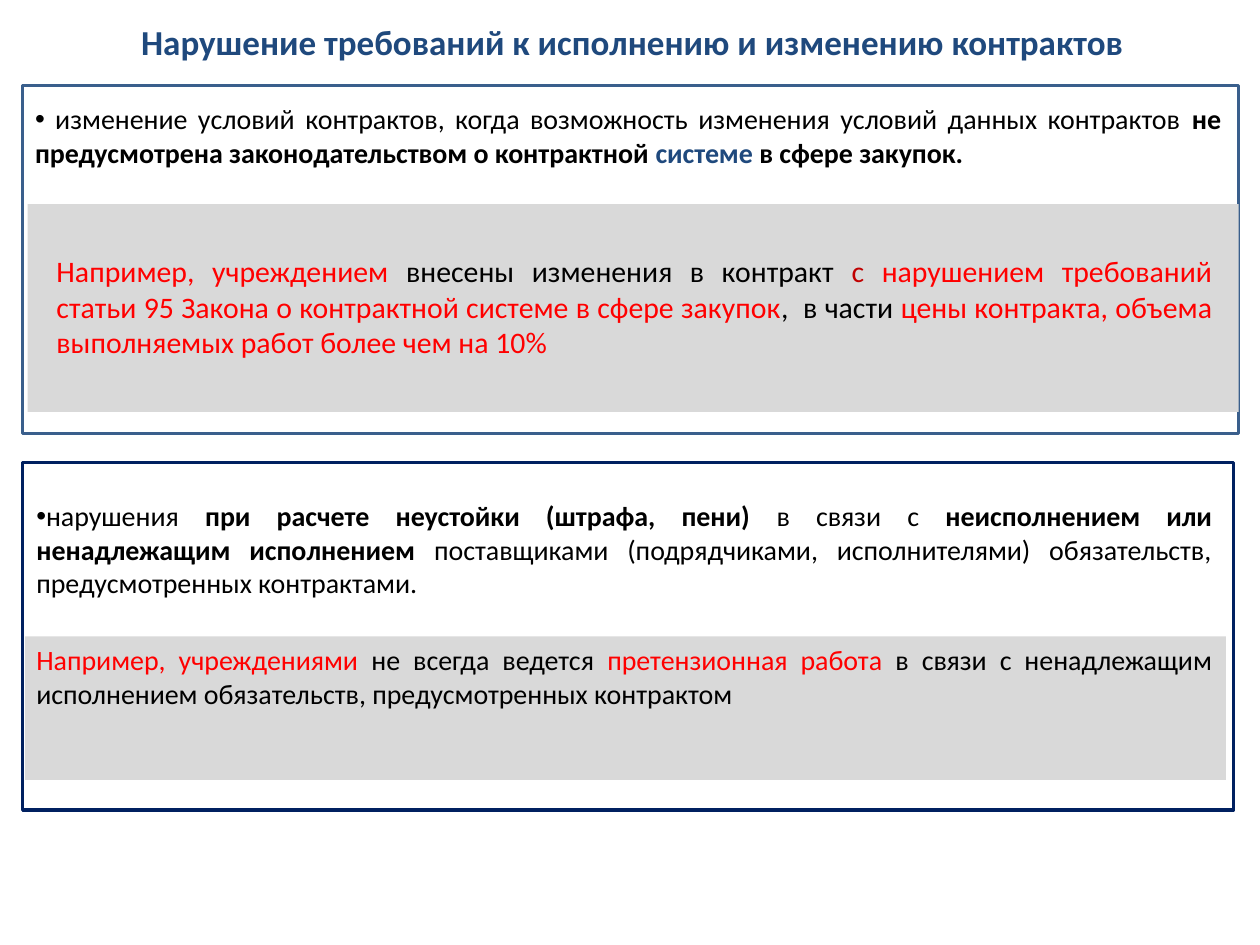
from lxml import etree
from pptx import Presentation
from pptx.dml.color import RGBColor
from pptx.enum.shapes import MSO_SHAPE
from pptx.enum.text import MSO_ANCHOR, PP_ALIGN
from pptx.oxml.ns import qn
from pptx.util import Inches, Pt

BLACK = RGBColor(0x00, 0x00, 0x00)
WHITE = RGBColor(0xFF, 0xFF, 0xFF)
GRAY = RGBColor(0xD9, 0xD9, 0xD9)
BLUE = RGBColor(0x1F, 0x49, 0x7D)
FRAME_BLUE = RGBColor(0x3A, 0x5F, 0x8C)
NAVY = RGBColor(0x00, 0x20, 0x60)
RED = RGBColor(0xFF, 0x00, 0x00)
DARK_RED = RGBColor(0xC0, 0x00, 0x00)
FONT = "Calibri"


def add_panel(slide, left, top, width, height, fill, line=None):
    shape = slide.shapes.add_shape(
        MSO_SHAPE.RECTANGLE, Inches(left), Inches(top), Inches(width), Inches(height)
    )
    shape.shadow.inherit = False
    shape.fill.solid()
    shape.fill.fore_color.rgb = fill
    if line is None:
        shape.line.fill.background()
    else:
        shape.line.color.rgb = line
        shape.line.width = Pt(2)


def add_bullet(paragraph):
    """Put a bullet right before the text, without an indent."""
    properties = paragraph._p.get_or_add_pPr()
    properties.set("marL", "0")
    properties.set("indent", "0")
    etree.SubElement(properties, qn("a:buFont")).set("typeface", "Arial")
    etree.SubElement(properties, qn("a:buChar")).set("char", "•")


def add_text(slide, left, top, width, height, runs, size=16,
             alignment=PP_ALIGN.JUSTIFY, anchor=MSO_ANCHOR.TOP, bullet=False):
    """Add one paragraph from runs of (text, colour, bold)."""
    text_box = slide.shapes.add_textbox(
        Inches(left), Inches(top), Inches(width), Inches(height)
    )
    frame = text_box.text_frame
    frame.word_wrap = True
    frame.vertical_anchor = anchor
    paragraph = frame.paragraphs[0]
    paragraph.alignment = alignment
    if bullet:
        add_bullet(paragraph)
    for text, color, bold in runs:
        run = paragraph.add_run()
        run.text = text
        run.font.name = FONT
        run.font.size = Pt(size)
        run.font.bold = bold
        run.font.color.rgb = color


def add_contract_changes(slide):
    add_panel(slide, 0.18, 0.68, 9.65, 2.76, WHITE, FRAME_BLUE)
    add_text(slide, 0.18, 0.76, 9.61, 0.91, [
        (" изменение условий контрактов, когда возможность изменения условий "
         "данных контрактов ", BLACK, False),
        ("не предусмотрена законодательством о контрактной ", BLACK, True),
        ("системе", BLUE, True),
        (" в сфере закупок.", BLACK, True),
    ], bullet=True)
    add_panel(slide, 0.22, 1.62, 9.61, 1.65, GRAY)
    add_text(slide, 0.35, 1.95, 9.37, 0.96, [
        ("Например, учреждением ", RED, False),
        ("внесены изменения в контракт ", BLACK, False),
        ("с ", DARK_RED, False),
        ("нарушением требований статьи 95 Закона о контрактной системе "
         "в сфере закупок", RED, False),
        (",  в части ", BLACK, False),
        ("цены контракта, объема выполняемых работ более чем на 10%", RED, False),
    ], size=17, anchor=MSO_ANCHOR.MIDDLE)


def add_penalties(slide):
    add_panel(slide, 0.18, 3.67, 9.61, 2.76, WHITE, NAVY)
    add_text(slide, 0.19, 3.91, 9.53, 0.91, [
        ("нарушения ", BLACK, False),
        ("при расчете неустойки (штрафа, пени) ", BLACK, True),
        ("в связи с ", BLACK, False),
        ("неисполнением или ненадлежащим исполнением ", BLACK, True),
        ("поставщиками (подрядчиками, исполнителями) обязательств, "
         "предусмотренных контрактами.", BLACK, False),
    ], bullet=True)
    add_panel(slide, 0.2, 5.05, 9.53, 1.14, GRAY)
    add_text(slide, 0.19, 5.05, 9.53, 0.64, [
        ("Например, учреждениями", RED, False),
        (" не всегда ведется ", BLACK, False),
        ("претензионная работа", RED, False),
        (" в связи с ненадлежащим исполнением обязательств, "
         "предусмотренных контрактом", BLACK, False),
    ])


def main():
    presentation = Presentation()
    presentation.slide_width = Inches(10)
    presentation.slide_height = Inches(7.5)
    slide = presentation.slides.add_slide(presentation.slide_layouts[6])
    add_text(slide, 0.02, 0.11, 10, 0.44, [
        ("Нарушение требований к исполнению и изменению контрактов", BLUE, True),
    ], size=20, alignment=PP_ALIGN.CENTER)
    add_contract_changes(slide)
    add_penalties(slide)
    presentation.save("out.pptx")


if __name__ == "__main__":
    main()
